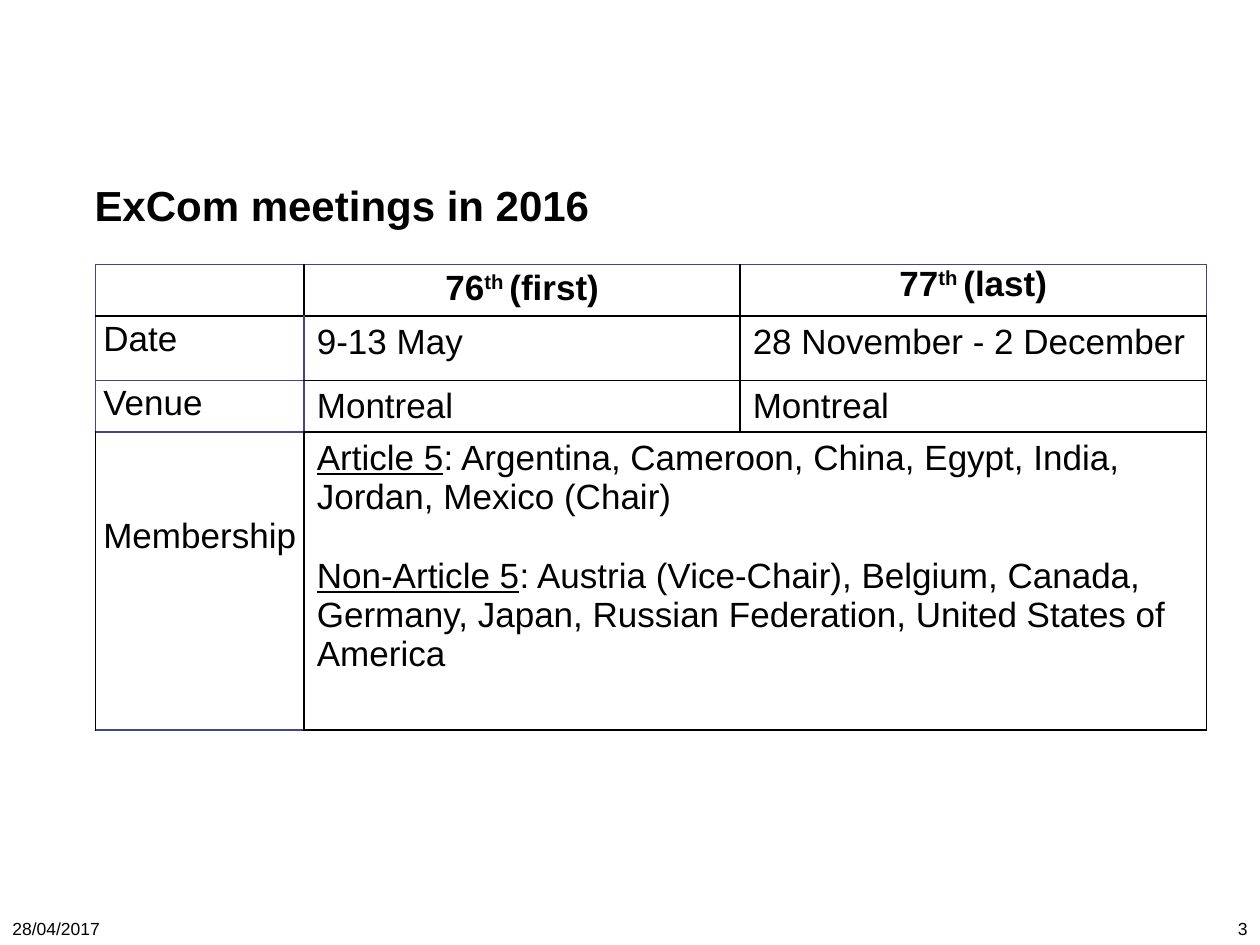
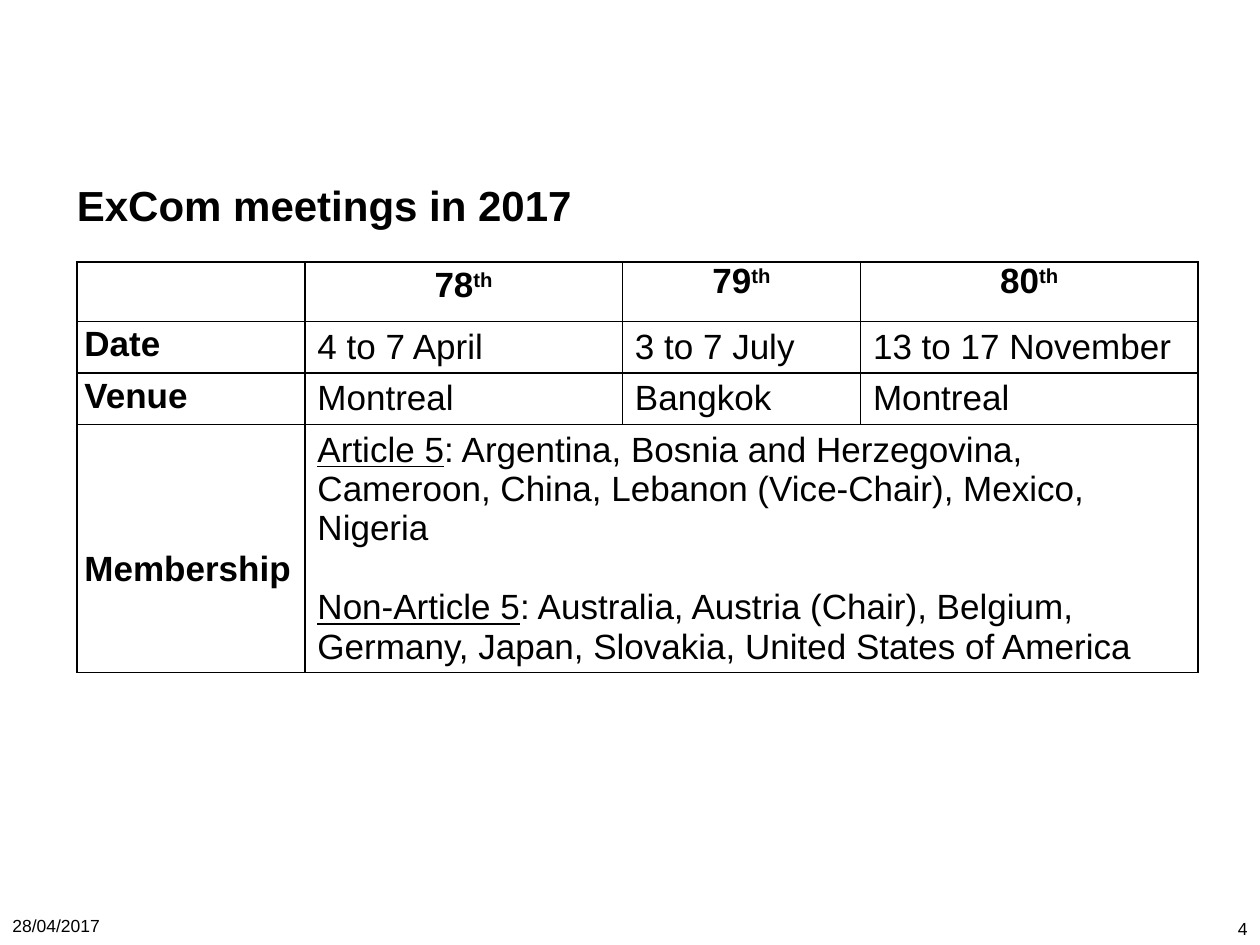
from lxml.etree import SubElement
from pptx import Presentation
from pptx.dml.color import RGBColor
from pptx.enum.text import MSO_ANCHOR, MSO_AUTO_SIZE, PP_ALIGN
from pptx.oxml import parse_xml
from pptx.oxml.ns import nsdecls, qn
from pptx.util import Inches, Pt

COLUMNS, ROWS = 100, 75
BLACK, BLUE = "000000", "40458C"
LINE_ROWS = 3.2
HEADER, LABEL, VALUE = "header", "label", "value"
SUPERSCRIPT = {"superscript": True}
UNDERLINE = {"underline": True}


def colour(value):
    return RGBColor.from_string(value)


class Deck:
    font_name = "Arial"
    sizes = {"title": 24, "table": 20, "footer": 10}

    def __init__(self):
        self.presentation = Presentation()
        self.presentation.slide_width = Inches(10)
        self.presentation.slide_height = Inches(7.5)
        self.slide = None

    def across(self, columns):
        return round(self.presentation.slide_width * columns / COLUMNS)

    def down(self, rows):
        return round(self.presentation.slide_height * rows / ROWS)

    def box(self, left, top, width, height):
        return self.across(left), self.down(top), self.across(width), self.down(height)

    def set_values(self, target, values):
        for name, value in values.items():
            setattr(target, name, value)

    def add_runs(self, paragraph, runs, size, alignment=PP_ALIGN.LEFT, bold=False):
        paragraph.alignment = alignment
        for text, extra in runs:
            run = paragraph.add_run()
            run.text = text
            values = {"name": self.font_name, "size": Pt(self.sizes[size]), "bold": bold}
            if "underline" in extra:
                values["underline"] = extra["underline"]
            self.set_values(run.font, values)
            run.font.color.rgb = colour(BLACK)
            if "superscript" in extra:
                run.font._element.set("baseline", "30000")

    def add_slide(self, title, place):
        self.slide = self.presentation.slides.add_slide(self.presentation.slide_layouts[5])
        shape = self.slide.shapes.title
        names = ("left", "top", "width", "height")
        self.set_values(shape, dict(zip(names, self.box(*place))))
        frame = shape.text_frame
        self.set_values(frame, {
            "word_wrap": True, "auto_size": MSO_AUTO_SIZE.NONE,
            "vertical_anchor": MSO_ANCHOR.MIDDLE,
            "margin_left": Inches(0.09), "margin_right": Inches(0.09),
        })
        self.add_runs(frame.paragraphs[0], [(title, {})], "title", bold=True)

    def add_footer(self, text, place, alignment):
        frame = self.slide.shapes.add_textbox(*self.box(*place)).text_frame
        self.set_values(frame, {"word_wrap": True, "vertical_anchor": MSO_ANCHOR.BOTTOM})
        self.add_runs(frame.paragraphs[0], [(text, {})], "footer", alignment)

    def add_footers(self, number, date_top):
        self.add_footer("28/04/2017", (0, date_top, 20.8, 5), PP_ALIGN.LEFT)
        self.add_footer(number, (91.7, 70, 8.3, 5), PP_ALIGN.RIGHT)

    def set_borders(self, cell, blue_sides):
        properties = cell._tc.get_or_add_tcPr()
        for index, side in enumerate("LRTB"):
            line = parse_xml(f'<a:ln{side} {nsdecls("a")} w="12700"/>')
            fill = SubElement(line, qn("a:solidFill"))
            shade = BLUE if side in blue_sides else BLACK
            SubElement(fill, qn("a:srgbClr"), val=shade)
            properties.insert(index, line)

    def fill_cell(self, cell, paragraphs, kind, margins, lines_above=0):
        names = ("margin_left", "margin_top", "margin_right", "margin_bottom")
        left, top, right, bottom = (Inches(margin) for margin in margins)
        top += self.down(LINE_ROWS * lines_above)
        self.set_values(cell, dict(zip(names, (left, top, right, bottom))))
        alignment = PP_ALIGN.CENTER if kind == HEADER else PP_ALIGN.LEFT
        bold = kind == HEADER or (kind == LABEL and self.bold_labels)
        for index, runs in enumerate(paragraphs):
            frame = cell.text_frame
            paragraph = frame.add_paragraph() if index else frame.paragraphs[0]
            if index:
                paragraph.space_before = Pt(23)
            self.add_runs(paragraph, runs, "table", alignment, bold)

    def add_meetings(self, origin, widths, heights, headers, facts, members,
                     lines_above, bold_labels=False, blue_edges=None):
        self.bold_labels = bold_labels
        last = len(heights) - 1
        place = self.box(*origin, sum(widths), sum(heights))
        table = self.slide.shapes.add_table(len(heights), len(widths), *place).table
        self.set_values(table, {"first_row": False, "horz_banding": False})
        for column, width in zip(table.columns, widths):
            column.width = self.across(width)
        for row, height in zip(table.rows, heights):
            row.height = self.down(height)
        for row in range(len(heights)):
            for column in range(len(widths)):
                cell = table.cell(row, column)
                cell.fill.background()
                self.set_borders(cell, (blue_edges or {}).get((row, column), ""))
        table.cell(last, 1).merge(table.cell(last, len(widths) - 1))

        narrow, default, none = (0.06, 0.03, 0.03, 0.03), (0.1, 0.05, 0.1, 0.05), (0,) * 4
        for column, runs in enumerate(headers, 1):
            margins = (0.06, 0.03, 0.06, 0.03) if column == 1 else none
            self.fill_cell(table.cell(0, column), [runs], HEADER, margins)
        for row, (label, values) in enumerate(facts.items(), 1):
            self.fill_cell(table.cell(row, 0), [[(label, {})]], LABEL, narrow)
            for column, value in enumerate(values, 1):
                self.fill_cell(table.cell(row, column), [[(value, {})]], VALUE, default)
        self.fill_cell(table.cell(last, 0), [[("Membership", {})]], LABEL, narrow, lines_above)
        groups = [[(group, UNDERLINE), (f": {names}", {})] for group, names in members.items()]
        self.fill_cell(table.cell(last, 1), groups, VALUE, default)


def main():
    deck = Deck()

    deck.add_slide("ExCom meetings in 2016", (6.6, 13.9, 78.7, 4.7))
    deck.add_meetings(
        (7.6, 21), (16.55, 34.6, 37), (4.1, 5.1, 4.1, 23.65),
        [[("76", {}), ("th ", SUPERSCRIPT), ("(first)", {})],
         [("77", {}), ("th ", SUPERSCRIPT), ("(last)", {})]],
        {"Date": ("9-13 May", "28 November - 2 December"),
         "Venue": ("Montreal", "Montreal")},
        {"Article 5": "Argentina, Cameroon, China, Egypt, India, Jordan, Mexico (Chair)",
         "Non-Article 5": "Austria (Vice-Chair), Belgium, Canada, Germany, Japan, "
                          "Russian Federation, United States of America"},
        lines_above=2,
        blue_edges={(0, 0): "LT", (0, 1): "T", (0, 2): "TR", (1, 0): "LRB",
                    (1, 1): "L", (2, 0): "LRTB", (2, 1): "L", (3, 0): "TB"})
    deck.add_footers("3", 70)

    deck.add_slide("ExCom meetings in 2017", (5.2, 12.7, 79.5, 7.1))
    deck.add_meetings(
        (6.1, 20.8), (18.1, 25.2, 18.9, 26.8), (4.7, 4.1, 4.1, 19.6),
        [[(number, {}), ("th", SUPERSCRIPT)] for number in ("78", "79", "80")],
        {"Date": ("4 to 7 April", "3 to 7 July", "13 to 17 November"),
         "Venue": ("Montreal", "Bangkok", "Montreal")},
        {"Article 5": "Argentina, Bosnia and Herzegovina, Cameroon, China, "
                      "Lebanon (Vice-Chair), Mexico, Nigeria",
         "Non-Article 5": "Australia, Austria (Chair), Belgium, Germany, Japan, "
                          "Slovakia, United States of America"},
        lines_above=3, bold_labels=True)
    deck.add_footers("4", 69.8)

    deck.presentation.save("out.pptx")


if __name__ == "__main__":
    main()
